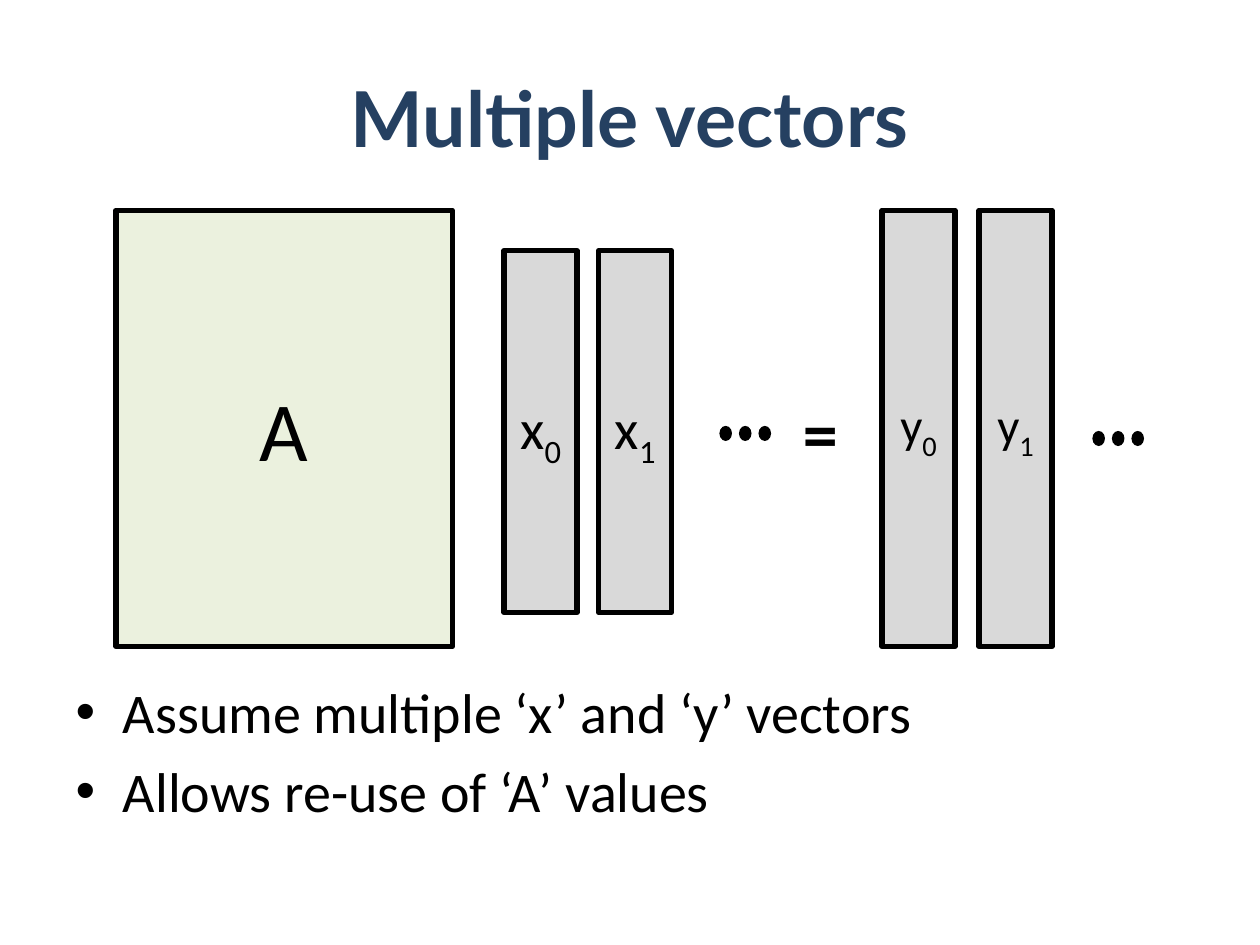
from dataclasses import dataclass

from lxml import etree
from pptx import Presentation
from pptx.dml.color import RGBColor
from pptx.enum.shapes import MSO_SHAPE
from pptx.enum.text import MSO_ANCHOR, MSO_AUTO_SIZE, PP_ALIGN
from pptx.util import Inches, Pt

RECTANGLE, OVAL = MSO_SHAPE.RECTANGLE, MSO_SHAPE.OVAL
CENTER, MIDDLE = PP_ALIGN.CENTER, MSO_ANCHOR.MIDDLE
FIXED, GROW = MSO_AUTO_SIZE.NONE, MSO_AUTO_SIZE.SHAPE_TO_FIT_TEXT


@dataclass(frozen=True)
class Theme:
    heading_font: str = "Lato"
    body_font: str = "Calibri"
    heading: str = "254061"
    ink: str = "000000"
    matrix: str = "EBF1DE"
    vector: str = "D9D9D9"
    title_size: int = 44
    body_size: int = 32
    matrix_size: int = 48
    x_size: int = 32
    y_size: int = 28
    equals_size: int = 40
    outline: int = 3


@dataclass(frozen=True)
class Box:
    left: float
    top: float
    width: float
    height: float

    def inner(self, left, top, width, height):
        """Box whose left and top are measured from this one."""
        return Box(self.left + left, self.top + top, width, height)

    def lengths(self):
        return [Inches(n) for n in (self.left, self.top, self.width, self.height)]


THEME = Theme()
VECTOR_WIDTH = 0.58


def set_font(para, size, color=THEME.ink, name=THEME.body_font, bold=False):
    font = para.font
    font.name, font.size, font.bold = name, Pt(size), bold
    font.color.rgb = RGBColor.from_string(color)


def fill_placeholder(shape, box, lines):
    shape.left, shape.top, shape.width, shape.height = box.lengths()
    frame = shape.text_frame
    frame.text = "\n".join(lines)
    frame.auto_size = FIXED
    return frame.paragraphs


def add_title(page, box):
    para = fill_placeholder(page.shapes.title, box, ["Multiple vectors"])[0]
    para.alignment = CENTER
    set_font(para, THEME.title_size, THEME.heading, THEME.heading_font, True)


def add_points(page, box):
    lines = ["Assume multiple ‘x’ and ‘y’ vectors", "Allows re-use of ‘A’ values"]
    for para in fill_placeholder(page.placeholders[1], box, lines):
        set_font(para, THEME.body_size)


def add_block(page, box, color, size, label, index=None):
    """Outlined rectangle with a centred label and an optional subscript."""
    block = page.shapes.add_shape(RECTANGLE, *box.lengths())
    block.shadow.inherit = False
    block.fill.solid()
    block.fill.fore_color.rgb = RGBColor.from_string(color)
    block.line.color.rgb = RGBColor.from_string(THEME.ink)
    block.line.width = Pt(THEME.outline)
    block.text_frame.vertical_anchor = MIDDLE
    para = block.text_frame.paragraphs[0]
    para.alignment = CENTER
    set_font(para, size)
    para.add_run().text = label
    if index is not None:
        span = para.add_run()
        span.text = str(index)
        span.font._element.set("baseline", "-25000")


def add_vectors(page, box, step, label, size):
    """Two columns of the vector family, one step apart."""
    for index in range(2):
        column = box.inner(index * step, 0, VECTOR_WIDTH, box.height)
        add_block(page, column, THEME.vector, size, label, index)


def add_ellipsis(page, box):
    """Three grouped dots spread evenly over the box."""
    dot_width = 0.1
    step = (box.width - dot_width) / 2
    group = page.shapes.add_group_shape()
    for index in range(3):
        place = box.inner(index * step, 0, dot_width, box.height)
        dot = group.shapes.add_shape(OVAL, *place.lengths())
        dot.shadow.inherit = False
        dot.fill.solid()
        dot.fill.fore_color.rgb = RGBColor.from_string(THEME.ink)
        dot.line.fill.background()


def add_equals(page, box):
    frame = page.shapes.add_textbox(*box.lengths()).text_frame
    frame.word_wrap = False
    frame.auto_size = GROW
    para = frame.paragraphs[0]
    para.text = "="
    para.alignment = CENTER
    set_font(para, THEME.equals_size, bold=True)


def add_equation(page, box):
    """Matrix A times the x vectors equals the y vectors."""
    add_block(page, box.inner(0, 0, 2.67, box.height),
              THEME.matrix, THEME.matrix_size, "A")
    add_vectors(page, box.inner(3.08, 0.32, 1.33, 2.87), 0.75, "x", THEME.x_size)
    add_ellipsis(page, box.inner(4.79, 1.71, 0.41, 0.12))
    add_equals(page, box.inner(5.35, 1.37, 0.48, 0.77))
    add_vectors(page, box.inner(6.08, 0, 1.35, box.height), 0.77, "y", THEME.y_size)
    add_ellipsis(page, box.inner(7.75, 1.75, 0.41, 0.12))


def main():
    deck = Presentation()
    deck.slide_width, deck.slide_height = Inches(10), Inches(7.5)
    page = deck.slides.add_slide(deck.slide_layouts[1])
    add_title(page, Box(0.5, 0.3, 9, 1.25))
    add_equation(page, Box(0.92, 1.67, 8.16, 3.46))
    add_points(page, Box(0.5, 5.33, 9, 1.37))
    deck.save("out.pptx")


if __name__ == "__main__":
    main()
